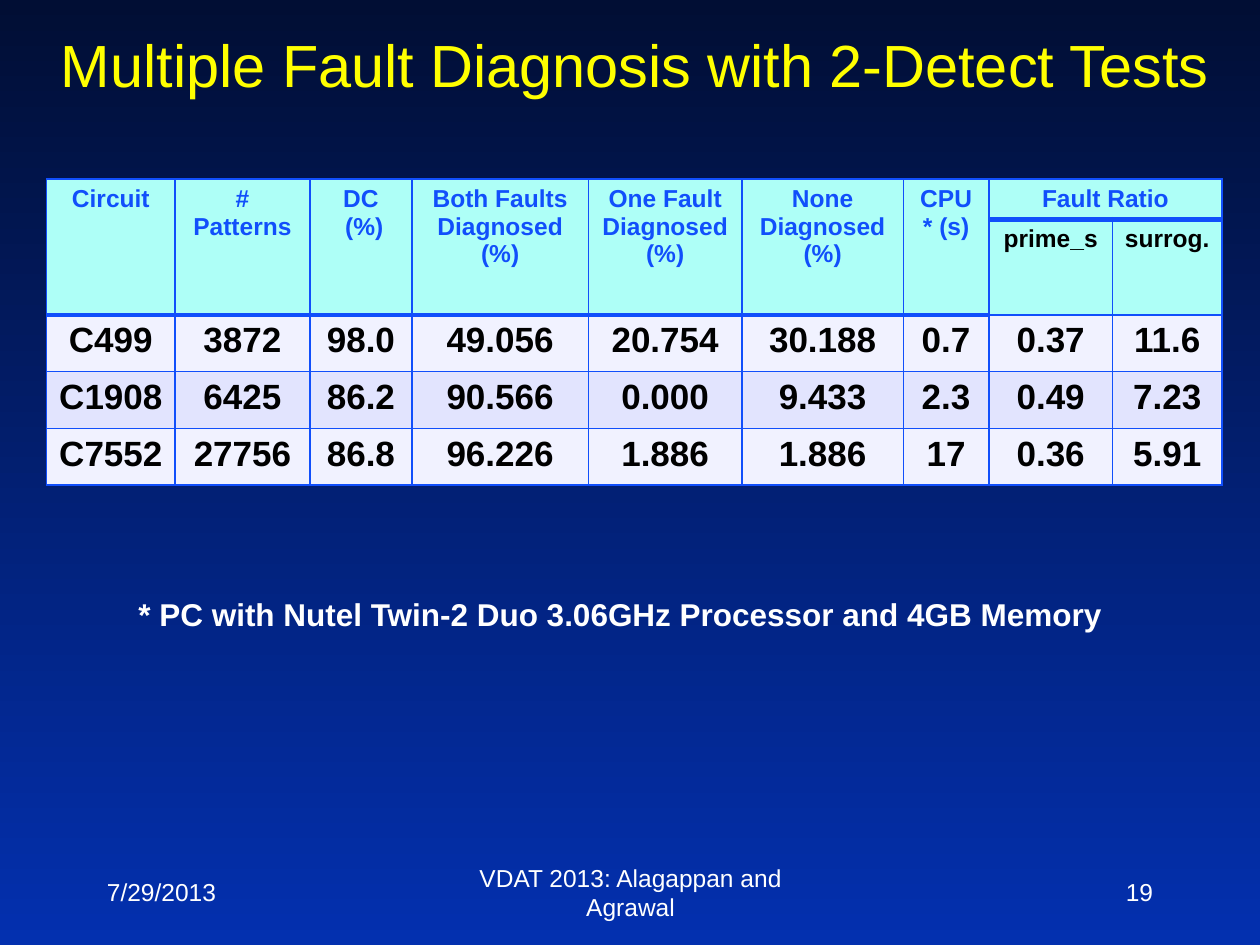
"""Build the slide on multiple fault diagnosis with 2-detect tests."""
from lxml.etree import SubElement
from pptx import Presentation
from pptx.dml.color import RGBColor
from pptx.enum.text import MSO_ANCHOR as Anchor, PP_ALIGN as Align
from pptx.oxml.ns import qn
from pptx.util import Inches, Pt

HUES = {"top": "010E34", "base": "0330AF", "title": "FFFF00", "white": "FFFFFF",
        "blue": "114FFB", "black": "000000", "head": "AEFFF7",
        "light": "F1F2FF", "dark": "E2E4FE"}
TITLE = "Multiple Fault Diagnosis with 2-Detect Tests"
HEADS = ["Circuit", "# Patterns", " DC \n (%)", "Both Faults Diagnosed (%)",
         "One Fault Diagnosed (%)", "None Diagnosed (%)", "CPU* (s)", "Fault Ratio", ""]
RATIOS = [""] * 7 + ["prime_s", "surrog."]
DATA = [
    ["C499", "3872", "98.0", "49.056", "20.754", "30.188", "0.7", "0.37", "11.6"],
    ["C1908", "6425", "86.2", "90.566", "0.000", "9.433", "2.3", "0.49", "7.23"],
    ["C7552", "27756", "86.8", "96.226", "1.886", "1.886", "17", "0.36", "5.91"],
]
WIDTHS = [1.02, 1.07, 0.81, 1.4, 1.22, 1.28, 0.68, 0.98, 0.87]
HEIGHTS = [0.32, 0.76] + [0.45] * len(DATA)
SPLIT = 7
NOTES = [
    ("7/29/2013", (0.75, 6.83, 2.08, 0.5), 14, False, Align.LEFT, Anchor.MIDDLE),
    ("19", (7.17, 6.83, 2.08, 0.5), 14, False, Align.RIGHT, Anchor.MIDDLE),
    ("VDAT 2013: Alagappan and Agrawal", (3.42, 6.83, 3.17, 0.5), 14, False,
     Align.CENTER, Anchor.MIDDLE),
    ("* PC with Nutel Twin-2 Duo 3.06GHz Processor and 4GB Memory",
     (1, 4.67, 7.9, 0.4), 18, True, Align.LEFT, Anchor.TOP),
]


def color(name):
    return RGBColor.from_string(HUES[name])


def write(frame, text, size, hue, bold=False, align=Align.CENTER):
    frame.text = text
    for para in frame.paragraphs:
        para.alignment = align
        for run in para.runs:
            font = run.font
            font.name, font.size, font.bold = "Arial", Pt(size), bold
            font.color.rgb = color(hue)


def place(shape, box):
    shape.left, shape.top, shape.width, shape.height = map(Inches, box)


def border(cell, side, width):
    line = SubElement(cell._tc.get_or_add_tcPr(), qn(f"a:ln{side}"), w=str(Pt(width)))
    fill = SubElement(line, qn("a:solidFill"))
    SubElement(fill, qn("a:srgbClr"), val=HUES["blue"])


def style(cell, row, col, text):
    head = row < 2
    if row:
        cell.margin_left = cell.margin_right = Inches(0.05)
    write(cell.text_frame, text, 14 if head else 20, "black" if row else "blue", True)
    thick = 2 if col < SPLIT else 1
    end = 2 if head and col < SPLIT else row + 1
    for side, edge in (("L", None), ("R", None), ("T", row), ("B", end)):
        border(cell, side, 3 if edge == thick else 1)
    cell.fill.solid()
    cell.fill.fore_color.rgb = color("head" if head else ("light", "dark")[row % 2])


def add_grid(slide):
    rows = [HEADS, RATIOS] + DATA
    grid = slide.shapes.add_table(len(rows), len(WIDTHS), Inches(0.37), Inches(1.42),
                                  Inches(sum(WIDTHS)), Inches(sum(HEIGHTS))).table
    for col, width in zip(grid.columns, WIDTHS):
        col.width = Inches(width)
    for row, height in zip(grid.rows, HEIGHTS):
        row.height = Inches(height)
    for r, row in enumerate(rows):
        for c, text in enumerate(row):
            style(grid.cell(r, c), r, c, text)
    for c in range(SPLIT):
        grid.cell(0, c).merge(grid.cell(1, c))
    grid.cell(0, SPLIT).merge(grid.cell(0, SPLIT + 1))


def main():
    deck = Presentation()
    deck.slide_width, deck.slide_height = Inches(10), Inches(7.5)
    slide = deck.slides.add_slide(deck.slide_layouts[5])
    fill = slide.background.fill
    fill.gradient()
    fill.gradient_angle = 270
    for stop, name in zip(fill.gradient_stops, ("top", "base")):
        stop.color.rgb = color(name)
    title = slide.shapes.title
    place(title, (0.25, 0.17, 9.58, 1.25))
    write(title.text_frame, TITLE, 34, "title")
    title.text_frame.vertical_anchor = Anchor.TOP
    add_grid(slide)
    for text, box, size, bold, align, anchor in NOTES:
        frame = slide.shapes.add_textbox(*map(Inches, box)).text_frame
        frame.word_wrap = True
        frame.vertical_anchor = anchor
        write(frame, text, size, "white", bold, align)
    deck.save("out.pptx")


if __name__ == "__main__":
    main()
